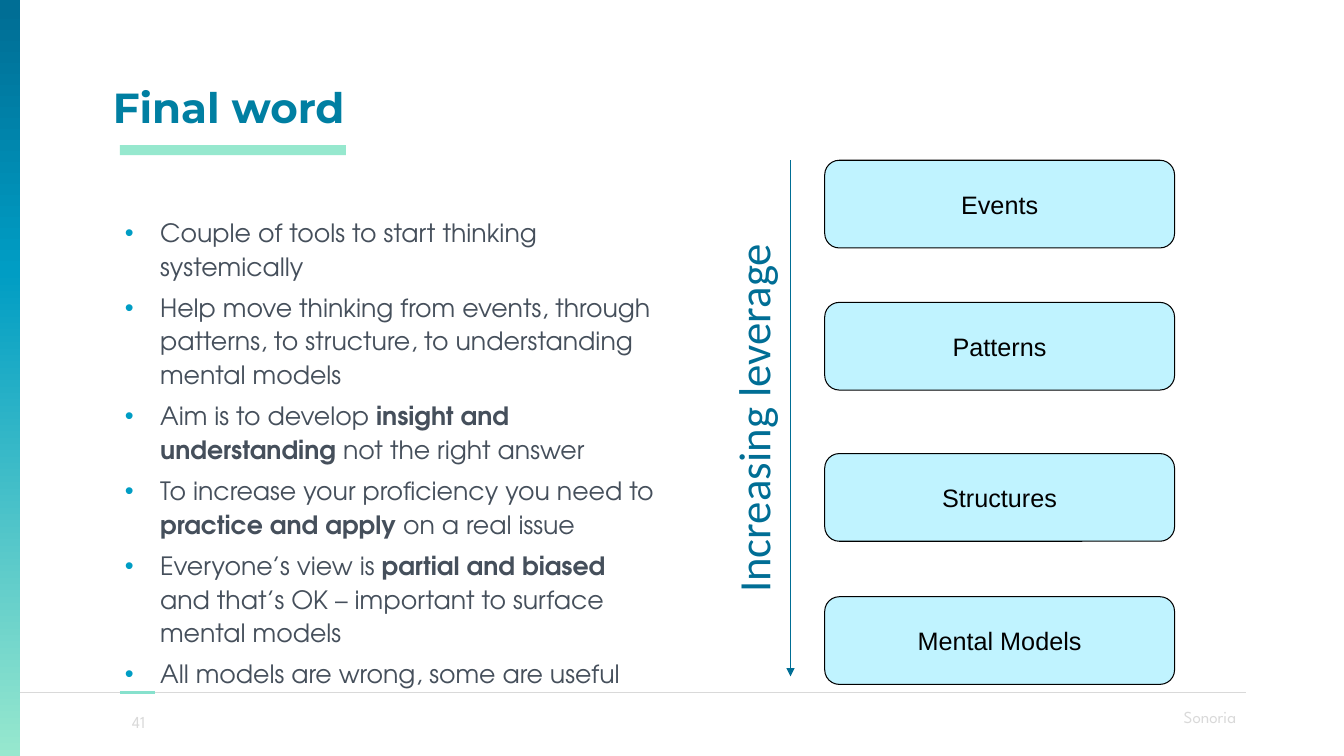
"""Build the closing slide: lessons on the left, levels of leverage on the right."""
from copy import deepcopy
from dataclasses import dataclass
from typing import NamedTuple

from lxml.etree import SubElement as Sub
from pptx import Presentation
from pptx.dml.color import RGBColor as Rgb
from pptx.enum.shapes import MSO_CONNECTOR as Conn, MSO_SHAPE as Kind
from pptx.enum.text import MSO_ANCHOR as Anchor, PP_ALIGN as Align
from pptx.oxml.ns import qn
from pptx.util import Pt

SCALE = 9144


class Box(NamedTuple):
    x: int
    y: int
    w: int
    h: int


@dataclass(frozen=True)
class Font:
    face: str
    size: int
    color: str
    bold: bool = False


@dataclass(frozen=True)
class Theme:
    mint: str = "96E8CE"
    tick: str = "87E1CD"
    sky: str = "009DC4"
    deep: str = "006E95"
    pale: str = "C0F3FF"
    gray: str = "D9D9D9"
    black: str = "000000"
    fade: tuple = ((0, "97E8CE"), (0.64, "009DC4"), (0.99, "006E95"))
    title: Font = Font("Montserrat", 30, "007FA2", True)
    body: Font = Font("TeX Gyre Adventor", 18, "454F5B")
    foot: Font = Font("League Spartan", 12, "D9D9D9")
    level: Font = Font("Arial", 18, "000000")
    side: Font = Font("Calibri", 32, "006E95")


@dataclass(frozen=True)
class Label:
    box: Box
    text: str
    font: Font
    align: Align = Align.LEFT
    anchor: Anchor = Anchor.TOP
    inset: int = 5
    wrap: bool = True
    turn: int = 0
    space: float = 1.0


@dataclass(frozen=True)
class Rule:
    start: tuple
    end: tuple
    color: str
    width: float
    arrow: bool = False


class Level(NamedTuple):
    top: int
    name: str


LOOK = Theme()
RULES = (
    Rule((0, 687), (1236, 687), LOOK.gray, 0.75),
    Rule((119, 687), (154, 687), LOOK.tick, 2.75),
    Rule((784, 159), (784, 671), LOOK.deep, 0.5, True),
)
LABELS = (
    Label(Box(102, 0, 1139, 141), "Final word", LOOK.title,
          anchor=Anchor.BOTTOM, inset=10, space=0.8),
    Label(Box(916, 696, 320, 40), "Sonoria", LOOK.foot, Align.RIGHT),
    Label(Box(111, 696, 53, 40), "41", LOOK.foot, Align.CENTER, Anchor.MIDDLE),
    Label(Box(477, 365, 512, 100), "Increasing leverage", LOOK.side,
          Align.CENTER, Anchor.BOTTOM, 10, False, 270),
)
LEVELS = (Level(159, "Events"), Level(300, "Patterns"),
          Level(450, "Structures"), Level(592, "Mental Models"))
POINTS = (
    ("Couple of tools to start thinking systemically",),
    ("Help move thinking from events, through patterns, to structure, "
     "to understanding mental models",),
    ("Aim is to develop ", "insight and understanding ", "not the right answer"),
    ("To increase your proficiency you need to ", "practice and apply ",
     "on a real issue"),
    ("Everyone’s view is ", "partial and biased ",
     "and that’s OK – important to surface mental models"),
    ("All models are wrong, some are useful",),
)


def emu(px: int) -> int:
    """Turn px into EMU."""
    return px * SCALE


def place(box: Box) -> list[int]:
    """Turn a box into EMU."""
    return [emu(side) for side in box]


def write(para, text: str, font: Font, bold: bool = False) -> None:
    """Add one run in the given font."""
    run = para.add_run()
    run.text = text
    run.font.name, run.font.size = font.face, Pt(font.size)
    run.font.bold = font.bold or bold
    run.font.color.rgb = Rgb.from_string(font.color)


def draw_rule(slide, rule: Rule) -> None:
    """Draw a straight line, with an arrowhead if asked."""
    ends = [emu(px) for px in (*rule.start, *rule.end)]
    line = slide.shapes.add_connector(Conn.STRAIGHT, *ends)
    line.line.color.rgb = Rgb.from_string(rule.color)
    line.line.width = Pt(rule.width)
    if rule.arrow:
        Sub(line.line._get_or_add_ln(), qn("a:tailEnd"), type="triangle")
    Sub(line._element.spPr, qn("a:effectLst"))


def draw_shape(slide, kind: Kind, box: Box, color: str):
    """Draw a flat shape with no outline."""
    shape = slide.shapes.add_shape(kind, *place(box))
    shape.shadow.inherit = False
    shape.fill.solid()
    shape.fill.fore_color.rgb = Rgb.from_string(color)
    shape.line.fill.background()
    return shape


def draw_strip(slide, box: Box) -> None:
    """Draw the fading strip at the left edge."""
    strip = draw_shape(slide, Kind.RECTANGLE, box, LOOK.sky)
    strip.fill.gradient()
    strip.fill.gradient_angle = 90
    stops = strip._element.spPr.find(".//" + qn("a:gsLst"))
    stops.append(deepcopy(stops[0]))
    for stop, (spot, color) in zip(strip.fill.gradient_stops, LOOK.fade):
        stop.position = spot
        stop.color.rgb = Rgb.from_string(color)


def draw_label(slide, label: Label) -> None:
    """Draw a text box with one line."""
    shape = slide.shapes.add_textbox(*place(label.box))
    shape.rotation = label.turn
    frame = shape.text_frame
    frame.word_wrap, frame.vertical_anchor = label.wrap, label.anchor
    frame.margin_left = frame.margin_right = emu(10)
    frame.margin_top = frame.margin_bottom = emu(label.inset)
    para = frame.paragraphs[0]
    para.alignment, para.line_spacing = label.align, label.space
    write(para, label.text, label.font)


def draw_level(slide, level: Level) -> None:
    """Draw one rounded box of the ladder."""
    shape = draw_shape(slide, Kind.ROUNDED_RECTANGLE,
                       Box(818, level.top, 347, 87), LOOK.pale)
    shape.line.color.rgb = Rgb.from_string(LOOK.black)
    shape.line.width = Pt(0.75)
    frame = shape.text_frame
    frame.word_wrap, frame.vertical_anchor = False, Anchor.MIDDLE
    frame.paragraphs[0].alignment = Align.CENTER
    write(frame.paragraphs[0], level.name, LOOK.level)


def draw_points(slide, box: Box) -> None:
    """Draw the bullet list, with every second run in bold."""
    frame = slide.shapes.add_textbox(*place(box)).text_frame
    frame.word_wrap = True
    for rank, parts in enumerate(POINTS):
        para = frame.add_paragraph() if rank else frame.paragraphs[0]
        para.line_spacing, para.space_before = 1.1, Pt(6)
        props = para._p.get_or_add_pPr()
        props.set("marL", str(emu(47)))
        props.set("indent", str(emu(-35)))
        Sub(Sub(props, qn("a:buClr")), qn("a:srgbClr"), val=LOOK.sky)
        Sub(props, qn("a:buFont"), typeface="Arial")
        Sub(props, qn("a:buChar"), char="•")
        for turn, text in enumerate(parts):
            write(para, text, LOOK.body, turn % 2 == 1)


def main() -> None:
    """Build and save the slide."""
    deck = Presentation()
    deck.slide_width, deck.slide_height = emu(1333), emu(750)
    slide = deck.slides.add_slide(deck.slide_layouts[6])
    for rule in RULES:
        draw_rule(slide, rule)
    draw_strip(slide, Box(0, 0, 20, 750))
    draw_shape(slide, Kind.RECTANGLE, Box(119, 144, 224, 10), LOOK.mint)
    draw_points(slide, Box(102, 208, 557, 467))
    for label in LABELS:
        draw_label(slide, label)
    for level in LEVELS:
        draw_level(slide, level)
    deck.save("out.pptx")


if __name__ == "__main__":
    main()
